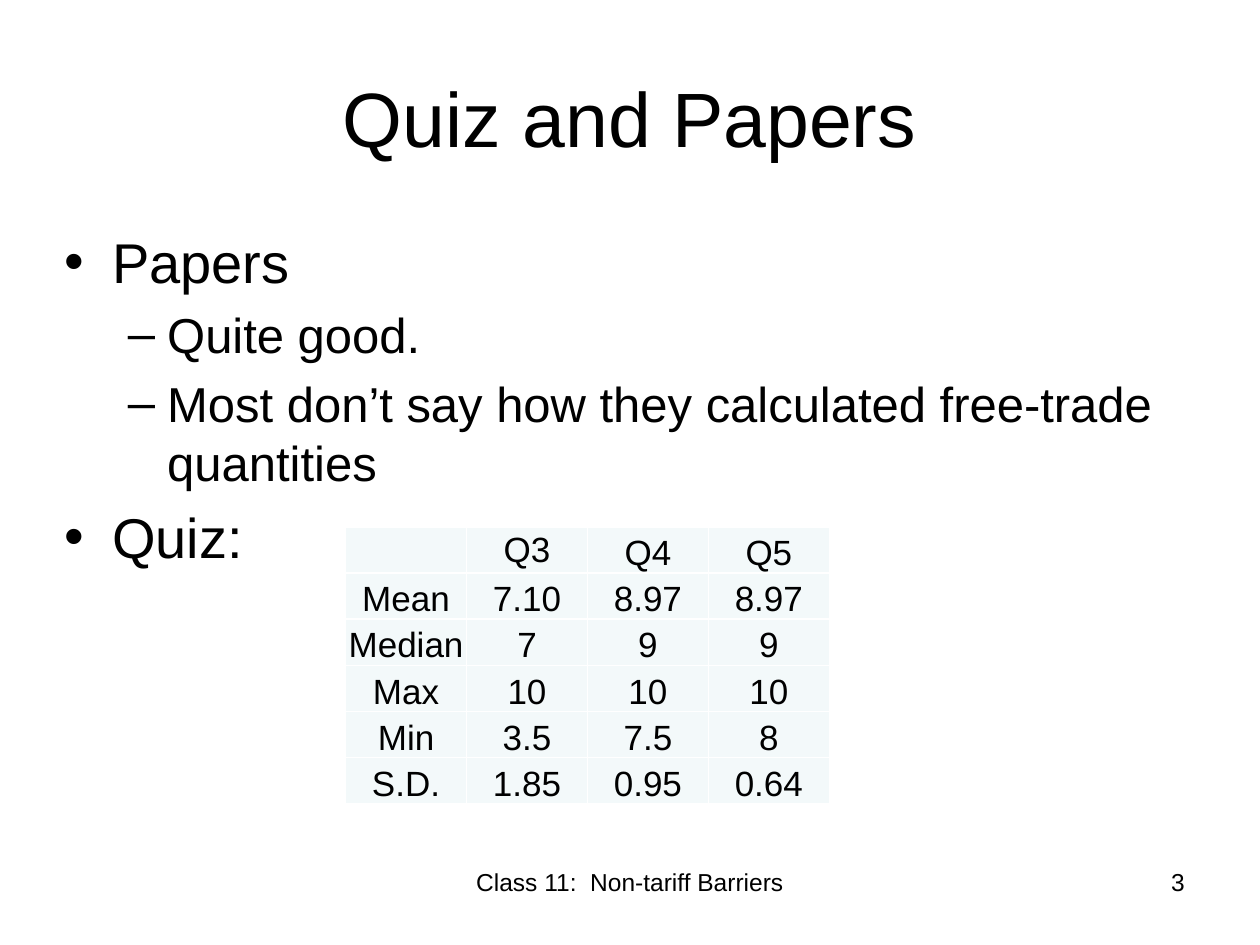
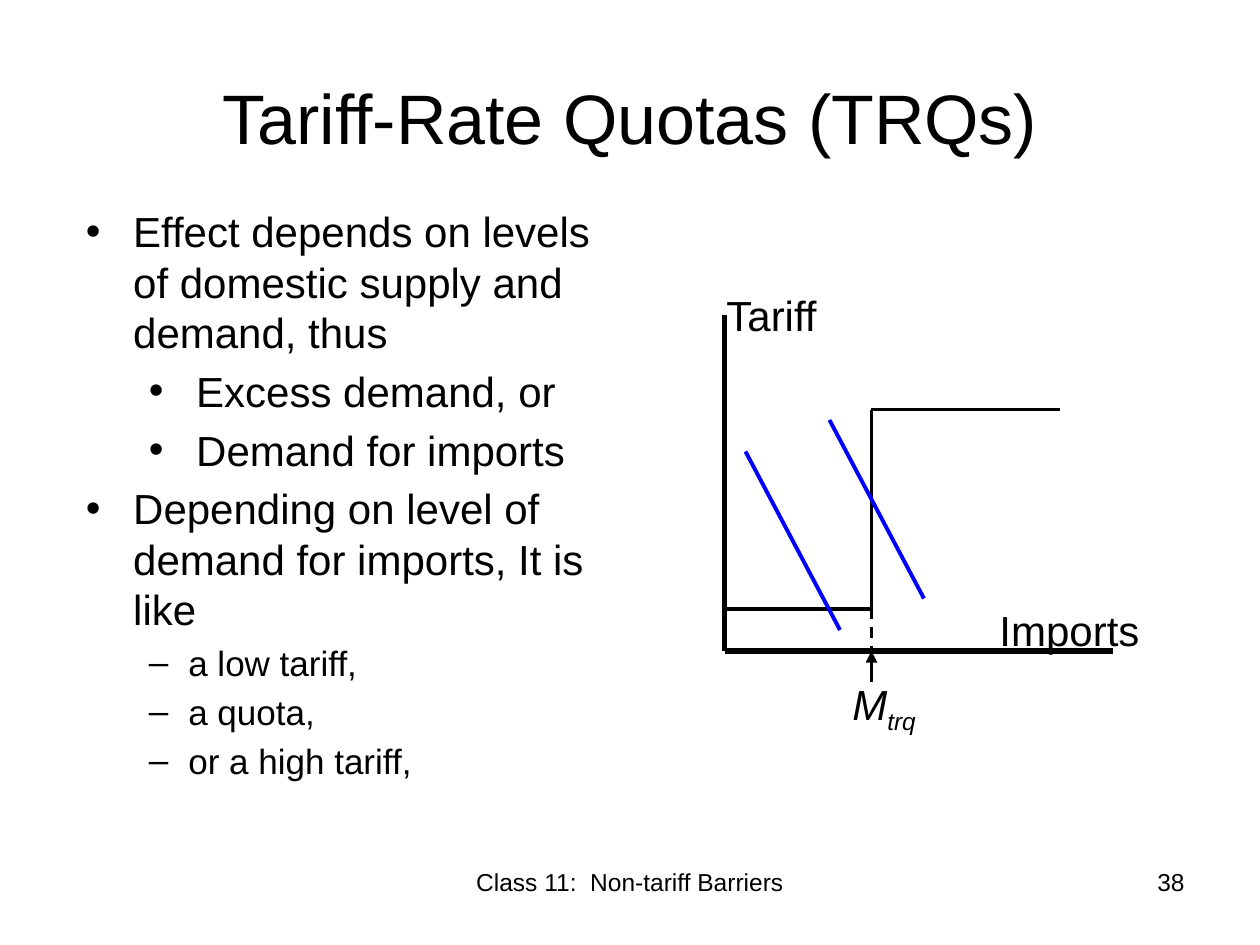
"""Builds two class slides: quiz results and tariff-rate quotas."""
from pptx import Presentation
from pptx.dml.color import RGBColor
from pptx.enum.dml import MSO_LINE
from pptx.enum.shapes import MSO_CONNECTOR
from pptx.enum.text import MSO_ANCHOR, PP_ALIGN
from pptx.oxml.ns import qn
from pptx.util import Pt
from lxml import etree

LEFT, CENTER, RIGHT = PP_ALIGN.LEFT, PP_ALIGN.CENTER, PP_ALIGN.RIGHT
TOP, MIDDLE, BOTTOM = MSO_ANCHOR.TOP, MSO_ANCHOR.MIDDLE, MSO_ANCHOR.BOTTOM
STRAIGHT, DASH = MSO_CONNECTOR.STRAIGHT, MSO_LINE.DASH
COLORS = {"text": "000000", "demand": "0000FF", "cell": "F3F9FA", "border": "FFFFFF"}
FONT = "Arial"
FOOTER = "Class 11:  Non-tariff Barriers"


def write(p, text, size=24, align=LEFT, italic=None, sub=False,
          bullet=None, left=0, hang=0, before=0):
    """Add one formatted run to a paragraph and set the paragraph's format."""
    p.alignment = align
    p.space_before = Pt(before)
    r = p.add_run()
    r.text = text
    r.font.name, r.font.size, r.font.italic = FONT, Pt(size), italic
    r.font.color.rgb = RGBColor.from_string(COLORS["text"])
    if sub:
        r._r.get_or_add_rPr().set("baseline", "-25000")
    if bullet:
        pPr = p._p.get_or_add_pPr()
        pPr.set("marL", str(Pt(left)))
        pPr.set("indent", str(-Pt(hang)))
        etree.SubElement(pPr, qn("a:buFont"), typeface=FONT)
        etree.SubElement(pPr, qn("a:buChar"), char=bullet)


def add_box(s, x, y, w, h, anchor=TOP):
    """Add an empty wrapping text box and return its text frame."""
    tf = s.shapes.add_textbox(Pt(x), Pt(y), Pt(w), Pt(h)).text_frame
    tf.word_wrap = True
    tf.vertical_anchor = anchor
    return tf


prs = Presentation()
prs.slide_width, prs.slide_height = Pt(720), Pt(540)

MAIN = dict(bullet="•", left=27, hang=27)
SUB = dict(bullet="–", left=58.5, hang=22.5)
SUB_DOT = dict(bullet="•", left=63, hang=27)

pages = [
    ("Quiz and Papers", 44, "3", (30, 126.5, 648, 356), [
        ("Papers", 32, MAIN),
        ("Quite good.", 28, SUB),
        ("Most don’t say how they calculated free-trade quantities", 28, SUB),
        ("Quiz:", 32, MAIN),
    ]),
    ("Tariff-Rate Quotas (TRQs)", 40, "38", (42, 114, 312, 192), [
        ("Effect depends on levels of domestic supply and demand, thus", 24, MAIN),
        ("Excess demand, or", 24, SUB_DOT),
        ("Demand for imports", 24, SUB_DOT),
        ("Depending on level of demand for imports, It is like", 24, MAIN),
        ("a low tariff,", 20, SUB),
        ("a quota,", 20, SUB),
        ("or a high tariff,", 20, SUB),
    ]),
]

slides = []
for title, title_size, number, body_box, items in pages:
    s = prs.slides.add_slide(prs.slide_layouts[6])
    slides.append(s)
    tf = add_box(s, 36, 21.6, 648, 90, MIDDLE)
    write(tf.paragraphs[0], title, size=title_size, align=CENTER)
    tf = add_box(s, *body_box)
    for i, (text, size, style) in enumerate(items):
        p = tf.add_paragraph() if i else tf.paragraphs[0]
        write(p, text, size=size, before=0.2 * size if i else 0, **style)
    tf = add_box(s, 246, 492, 228, 37.5)
    write(tf.paragraphs[0], FOOTER, size=14, align=CENTER)
    tf = add_box(s, 516, 492, 168, 37.5)
    write(tf.paragraphs[0], number, size=14, align=RIGHT)

quiz_slide, quota_slide = slides

scores = [
    ("", "Q3", "Q4", "Q5"),
    ("Mean", "7.10", "8.97", "8.97"),
    ("Median", "7", "9", "9"),
    ("Max", "10", "10", "10"),
    ("Min", "3.5", "7.5", "8"),
    ("S.D.", "1.85", "0.95", "0.64"),
]
COL_W, ROW_H = 69.12, 26.4
table = quiz_slide.shapes.add_table(len(scores), 4, Pt(197.5), Pt(301),
                                    Pt(4 * COL_W), Pt(6 * ROW_H)).table
for col in table.columns:
    col.width = Pt(COL_W)
for row, values in zip(table.rows, scores):
    row.height = Pt(ROW_H)
    for cell, value in zip(row.cells, values):
        cell.margin_left = cell.margin_right = cell.margin_top = Pt(0.75)
        cell.margin_bottom = 0
        cell.vertical_anchor = MIDDLE if value == "Q3" else BOTTOM
        tcPr = cell._tc.get_or_add_tcPr()
        for side in ("lnL", "lnR", "lnT", "lnB"):
            ln = etree.SubElement(tcPr, qn(f"a:{side}"), w=str(Pt(1)))
            fill = etree.SubElement(ln, qn("a:solidFill"))
            etree.SubElement(fill, qn("a:srgbClr"), val=COLORS["border"])
        cell.fill.solid()
        cell.fill.fore_color.rgb = RGBColor.from_string(COLORS["cell"])
        if value:
            write(cell.text_frame.paragraphs[0], value, size=20, align=CENTER)

X0, X_TRQ, Y0 = 414, 498, 372
Y_LOW, Y_HIGH = 348, 234
lines = [
    (X0, 180, X0, Y0, 3, "text", None),
    (X0, Y0, 636, Y0, 3, "text", None),
    (X0, Y_LOW, X_TRQ, Y_LOW, 2.25, "text", None),
    (X_TRQ, Y_LOW, X_TRQ, Y_HIGH, 2.25, "text", None),
    (X_TRQ, Y_HIGH, 606, Y_HIGH, 2.25, "text", None),
    (X_TRQ, Y_LOW, X_TRQ, Y0, 1.5, "text", "dash"),
    (X_TRQ, 390, X_TRQ, Y0, 2.25, "text", "arrow"),
    (426, 258, 480, 360, 2.25, "demand", None),
    (474, 240, 528, 342, 2.25, "demand", None),
]
for x1, y1, x2, y2, width, color, kind in lines:
    c = quota_slide.shapes.add_connector(STRAIGHT, Pt(x1), Pt(y1), Pt(x2), Pt(y2))
    c.line.width = Pt(width)
    c.line.color.rgb = RGBColor.from_string(COLORS[color])
    if kind == "dash":
        c.line.dash_style = DASH
    if kind == "arrow":
        etree.SubElement(c.line._get_or_add_ln(), qn("a:tailEnd"), type="triangle")
    etree.SubElement(c._element.spPr, qn("a:effectLst"))

for text, x, y in [("Imports", 564, 342), ("Tariff", 408, 162), ("M", 480, 384)]:
    p = add_box(quota_slide, x, y, 126, 36).paragraphs[0]
    write(p, text, italic=text == "M")
    if text == "M":
        write(p, "trq", italic=True, sub=True)

prs.save("out.pptx")
